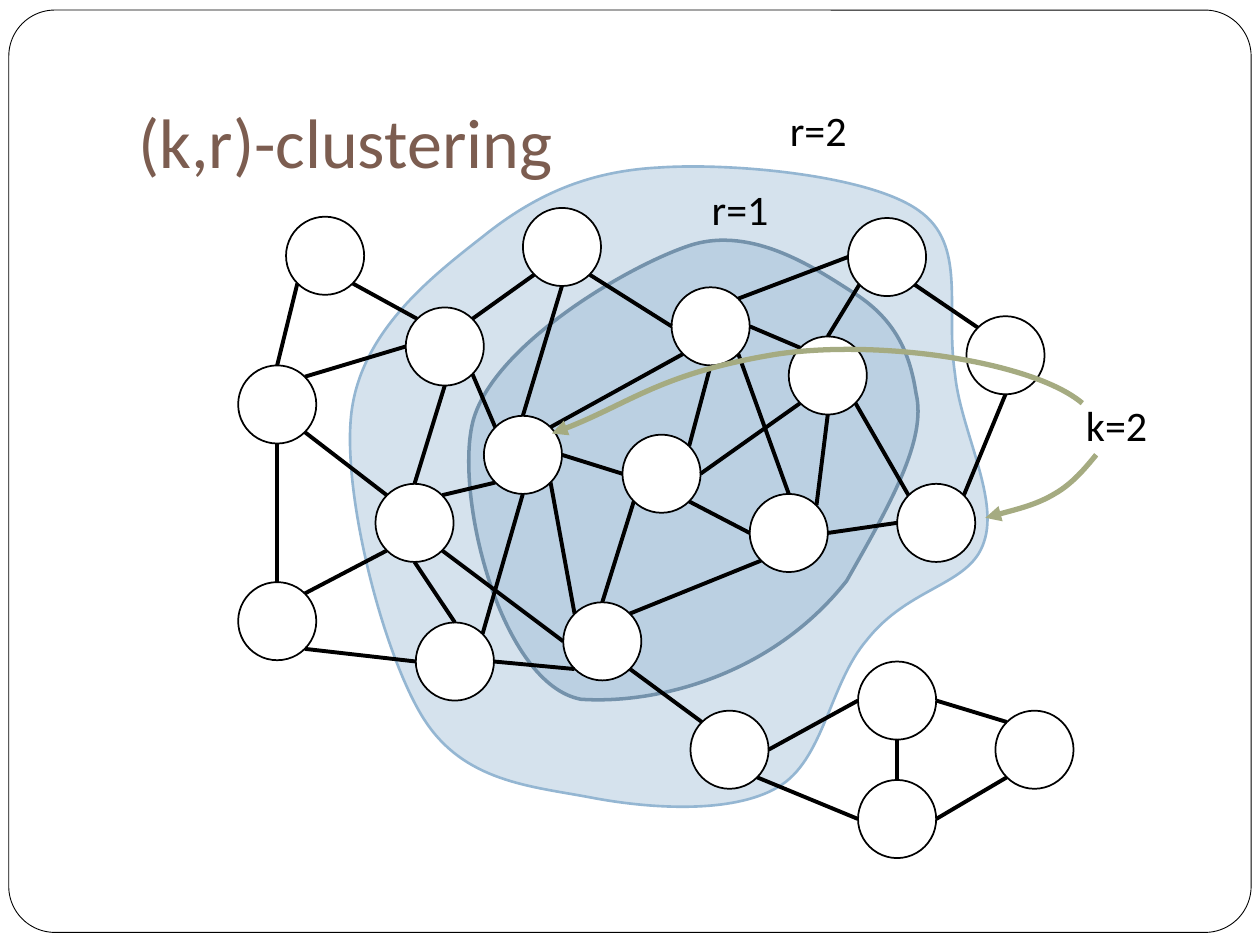
from pptx import Presentation
from pptx.dml.color import RGBColor
from pptx.enum.shapes import MSO_CONNECTOR, MSO_SHAPE
from pptx.enum.text import MSO_ANCHOR
from pptx.oxml.ns import qn
from pptx.util import Inches, Pt
from lxml.etree import SubElement

BLACK = RGBColor(0x00, 0x00, 0x00)
WHITE = RGBColor(0xFF, 0xFF, 0xFF)
BROWN = RGBColor(0x7C, 0x5D, 0x50)
BLUE = RGBColor(0x94, 0xB6, 0xD2)
DARK_BLUE = RGBColor(0x74, 0x92, 0xAB)
OLIVE = RGBColor(0xA5, 0xAB, 0x81)

NODE_SIZE = 0.62
RADIUS = NODE_SIZE / 2
DIAGONAL = 0.22

deck = Presentation()
deck.slide_width = Inches(10)
deck.slide_height = Inches(7.5)
page = deck.slides.add_slide(deck.slide_layouts[6])


def add_curve(points, color, width):
    """Draw cubic Bezier segments: a start point, then three points for each segment."""
    corners = [(Inches(x), Inches(y)) for x, y in points]
    builder = page.shapes.build_freeform(*corners[0], scale=1.0)
    builder.add_line_segments(corners[1:], close=points[0] == points[-1])
    curve = builder.convert_to_shape()
    curve.shadow.inherit = False
    curve.line.color.rgb = color
    curve.line.width = Pt(width)
    segments = list(curve._element.iter(qn("a:lnTo")))
    for first, second, third in zip(segments[::3], segments[1::3], segments[2::3]):
        first.tag = qn("a:cubicBezTo")
        for segment in (second, third):
            first.append(segment[0])
            segment.getparent().remove(segment)
    return curve


def add_text(text, left, top, width, height, size, color):
    box = page.shapes.add_textbox(Inches(left), Inches(top), Inches(width), Inches(height))
    span = box.text_frame.paragraphs[0].add_run()
    span.text = text
    span.font.name = "Calibri"
    span.font.size = Pt(size)
    span.font.color.rgb = color
    return box.text_frame


frame = page.shapes.add_shape(
    MSO_SHAPE.ROUNDED_RECTANGLE, Inches(0.07), Inches(0.08), Inches(9.86), Inches(7.32))
frame.adjustments[0] = 0.05
frame.shadow.inherit = False
frame.fill.solid()
frame.fill.fore_color.rgb = WHITE
frame.line.color.rgb = BLACK
frame.line.width = Pt(0.5)

# Regions within two hops and one hop
two_hops = [
    (6.88, 5.08), (7.22, 4.65), (7.7, 4.65), (7.81, 4.3),
    (7.93, 3.95), (7.62, 3.4), (7.58, 2.97), (7.5, 2.45), (7.68, 1.94), (7.29, 1.67),
    (6.9, 1.39), (5.81, 1.29), (5.23, 1.33), (4.66, 1.36), (4.24, 1.55), (3.83, 1.88),
    (3.42, 2.2), (2.87, 2.63), (2.79, 3.27), (2.71, 3.91), (3.04, 5.19), (3.36, 5.7),
    (3.68, 6.21), (4.22, 6.24), (4.69, 6.33), (5.16, 6.42), (5.81, 6.46), (6.17, 6.25),
    (6.54, 6.04), (6.58, 5.43), (6.88, 5.08),
]
one_hop = [
    (6.72, 4.61), (7.06, 4.01), (7.36, 3.49), (7.27, 3.12),
    (7.22, 2.79), (7.1, 2.54), (6.8, 2.34), (6.5, 2.15), (5.98, 1.78), (5.47, 1.95),
    (4.96, 2.12), (3.89, 2.76), (3.75, 3.36), (3.61, 3.96), (3.98, 5.43), (4.61, 5.55),
    (5.2, 5.59), (6.12, 5.37), (6.72, 4.61),
]
for points, color, width in ((two_hops, BLUE, 1.5), (one_hop, DARK_BLUE, 2)):
    region = add_curve(points, color, width)
    region.fill.solid()
    region.fill.fore_color.rgb = BLUE
    fill_color = region._element.spPr.find(qn("a:solidFill"))[0]
    SubElement(fill_color, qn("a:alpha"), val="39000")

title = add_text("(k,r)-clustering", 1, 0.3, 8.5, 1.25, 40, BROWN)
title.word_wrap = True
title.vertical_anchor = MSO_ANCHOR.BOTTOM
title.margin_bottom = Inches(0.1)

# Left and top of each node
nodes = {
    "A": (3.84, 3.3), "B": (6.26, 2.67), "C": (5.95, 3.92), "D": (3.3, 4.94),
    "E": (4.47, 4.78), "F": (2.98, 3.84), "G": (4.15, 1.65), "H": (3.22, 2.44),
    "I": (5.33, 2.28), "J": (5.48, 5.64), "K": (7.12, 3.84), "L": (6.81, 6.19),
    "M": (7.9, 5.64), "N": (7.67, 2.51), "O": (4.94, 3.45), "P": (1.89, 4.62),
    "Q": (1.89, 2.9), "R": (2.27, 1.72), "S": (6.73, 1.73), "T": (6.81, 5.25),
}
for left, top in nodes.values():
    node = page.shapes.add_shape(
        MSO_SHAPE.FLOWCHART_CONNECTOR, Inches(left), Inches(top),
        Inches(NODE_SIZE), Inches(NODE_SIZE))
    node.shadow.inherit = False
    node.fill.solid()
    node.fill.fore_color.rgb = WHITE
    node.line.color.rgb = BLACK
    node.line.width = Pt(1)

# Each edge end is a node and the compass point where the edge touches it
compass = {
    "n": (0, -RADIUS), "s": (0, RADIUS), "w": (-RADIUS, 0), "e": (RADIUS, 0),
    "nw": (-DIAGONAL, -DIAGONAL), "ne": (DIAGONAL, -DIAGONAL),
    "sw": (-DIAGONAL, DIAGONAL), "se": (DIAGONAL, DIAGONAL),
}
edges = """
    Ae-Ow Ie-Bnw Bn-Ssw Gse-Iw One-Is Hse-Anw Ane-Isw Ose-Cw Gs-An Hne-Gsw
    Ise-Cn Bs-Cne Oe-Bsw Ine-Sw Pne-Fsw Pse-Dw De-Esw Fs-Dn Hs-Fn Fse-Ew
    Pn-Qs Qse-Fnw Ese-Jnw Ene-Csw Dne-As En-Osw Enw-Ase Fne-Asw Qne-Hw Ln-Ts
    Msw-Le Hnw-Rse Qn-Rsw Mnw-Te Lw-Jse Je-Tw Ns-Kne Sse-Nnw Bse-Knw Ce-Kw
"""
for edge in edges.split():
    ends = []
    for end in edge.split("-"):
        left, top = nodes[end[0]]
        across, down = compass[end[1:]]
        ends += [Inches(left + RADIUS + across), Inches(top + RADIUS + down)]
    link = page.shapes.add_connector(MSO_CONNECTOR.STRAIGHT, *ends)
    link.line.color.rgb = BLACK
    link.line.width = Pt(2.25)
    SubElement(link._element.spPr, qn("a:effectLst"))

for text, left, top, width in (
        ("r=1", 5.55, 1.41, 0.7), ("r=2", 6.17, 0.78, 0.7), ("k=2", 8.52, 3.12, 0.75)):
    label = add_text(text, left, top, width, 0.51, 24, BLACK)
    label.word_wrap = False

# Arrows from the k=2 label to the cluster heads
arrows = (
    [(8.7, 3.61), (8.61, 3.72), (8.51, 3.84), (8.37, 3.92),
     (8.22, 4.01), (7.82, 4.11), (7.82, 4.11)],
    [(8.59, 3.2), (8.2, 2.87), (6.99, 2.69), (6.17, 2.81),
     (5.25, 2.96), (4.97, 3.23), (4.38, 3.44)],
)
for points in arrows:
    arrow = add_curve(points, OLIVE, 3)
    arrow.fill.background()
    SubElement(arrow.line._get_or_add_ln(), qn("a:tailEnd"), type="triangle")

deck.save("out.pptx")
